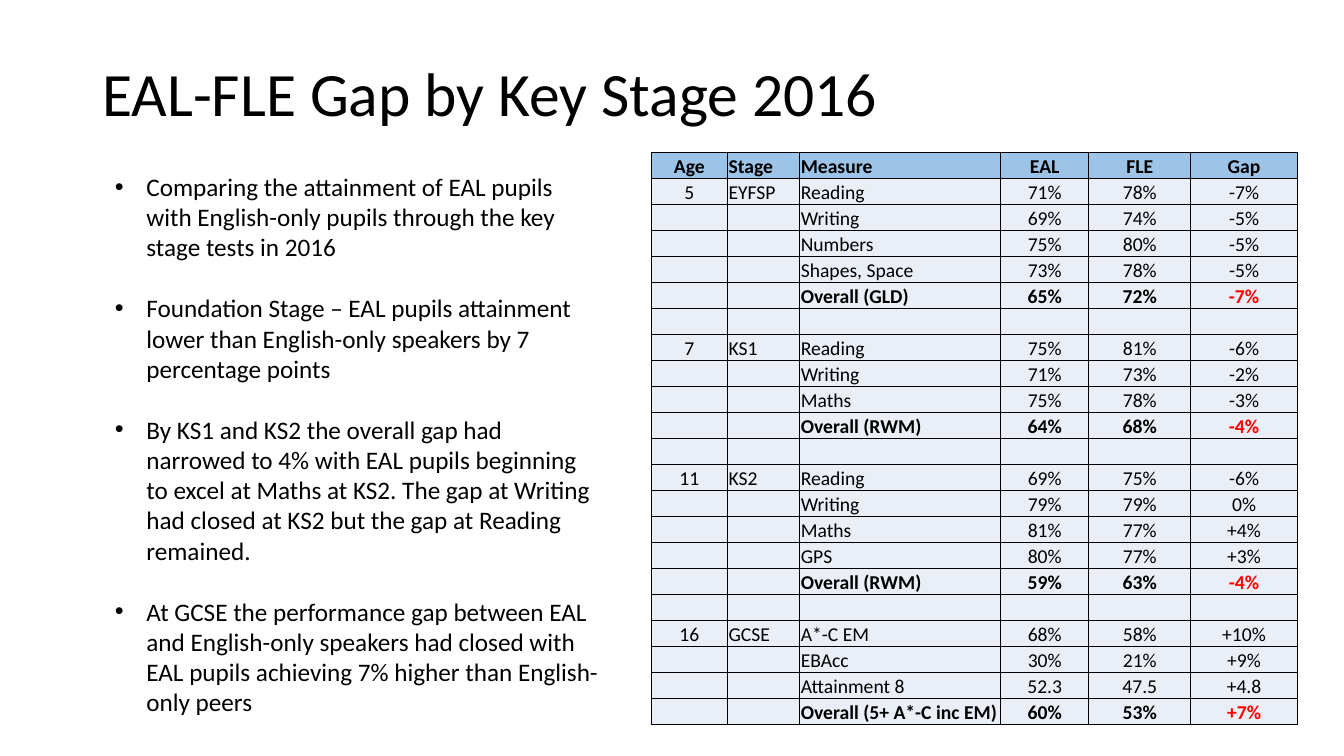
"""Build the slide on the EAL-FLE gap by key stage in 2016."""
import pptx
import pptx.dml.color
import pptx.enum.text
import pptx.oxml
import pptx.oxml.ns
import pptx.util

TITLE = "EAL-FLE Gap by Key Stage 2016"
POINTS = [
    "Comparing the attainment of EAL pupils with English-only pupils through the key stage tests in 2016",
    "Foundation Stage – EAL pupils attainment lower than English-only speakers by 7 percentage points",
    "By KS1 and KS2 the overall gap had narrowed to 4% with EAL pupils beginning to excel at Maths at KS2. "
    "The gap at Writing had closed at KS2 but the gap at Reading remained.",
    "At GCSE the performance gap between EAL and English-only speakers had closed with EAL pupils "
    "achieving 7% higher than English-only peers",
]
HEAD = ("Age", "Stage", "Measure", "EAL", "FLE", "Gap")
STAGES = [
    ("5", "EYFSP", [
        ("Reading", "71%", "78%", "-7%"),
        ("Writing", "69%", "74%", "-5%"),
        ("Numbers", "75%", "80%", "-5%"),
        ("Shapes, Space", "73%", "78%", "-5%"),
        ("Overall (GLD)", "65%", "72%", "-7%"),
    ]),
    ("7", "KS1", [
        ("Reading", "75%", "81%", "-6%"),
        ("Writing", "71%", "73%", "-2%"),
        ("Maths", "75%", "78%", "-3%"),
        ("Overall (RWM)", "64%", "68%", "-4%"),
    ]),
    ("11", "KS2", [
        ("Reading", "69%", "75%", "-6%"),
        ("Writing", "79%", "79%", "0%"),
        ("Maths", "81%", "77%", "+4%"),
        ("GPS", "80%", "77%", "+3%"),
        ("Overall (RWM)", "59%", "63%", "-4%"),
    ]),
    ("16", "GCSE", [
        ("A*-C EM", "68%", "58%", "+10%"),
        ("EBAcc", "30%", "21%", "+9%"),
        ("Attainment 8", "52.3", "47.5", "+4.8"),
        ("Overall (5+ A*-C inc EM)", "60%", "53%", "+7%"),
    ]),
]
THEME = {
    "font": "Calibri", "title": 44, "body": 18, "cell": 14,
    "ink": "000000", "alert": "FF0000", "head": "9DC3E6", "fill": "EAEFF7",
}
WIDTHS = (54.6, 51.6, 143.6, 62.8, 73, 76)
LEFT, TOP, ROW = 465.1, 108.9, 18.58
INDENT, GAP = 22.5, 21.9

Pt = pptx.util.Pt
ALIGN = pptx.enum.text.PP_ALIGN
ANCHOR = pptx.enum.text.MSO_ANCHOR
SPACE = pptx.oxml.ns.nsdecls("a")


def tint(name):
    return pptx.dml.color.RGBColor.from_string(THEME[name])


def style(para, size, ink="ink", bold=False):
    for run in para.runs:
        run.font.name = THEME["font"]
        run.font.size = Pt(THEME[size])
        run.font.bold = bold
        run.font.color.rgb = tint(ink)


def add_box(slide, left, top, width, height):
    frame = slide.shapes.add_textbox(Pt(left), Pt(top), Pt(width), Pt(height)).text_frame
    frame.word_wrap = True
    return frame


def add_title(slide):
    frame = add_box(slide, 66, 28.75, 828, 80)
    frame.vertical_anchor = ANCHOR.MIDDLE
    frame.text = TITLE
    frame.paragraphs[0].line_spacing = 0.9
    style(frame.paragraphs[0], "title")


def add_points(slide):
    frame = add_box(slide, 75, 118.8, 363, 422)
    frame.text = "\n".join(POINTS)
    for para in frame.paragraphs:
        style(para, "body")
        if para.text != POINTS[-1]:
            para.space_after = Pt(GAP)
        props = para._p.get_or_add_pPr()
        props.set("marL", str(Pt(INDENT)))
        props.set("indent", str(-Pt(INDENT)))
        props.append(pptx.oxml.parse_xml(f'<a:buFont {SPACE} typeface="Arial"/>'))
        props.append(pptx.oxml.parse_xml(f'<a:buChar {SPACE} char="•"/>'))


def list_rows():
    rows = [HEAD]
    for age, stage, scores in STAGES:
        if len(rows) > 1:
            rows.append(("",) * len(HEAD))
        for spot, score in enumerate(scores):
            rows.append(((age, stage) if spot == 0 else ("", "")) + score)
    return rows


def add_edges(cell):
    props = cell._tc.get_or_add_tcPr()
    for spot, side in enumerate("LRTB"):
        props.insert(spot, pptx.oxml.parse_xml(
            f'<a:ln{side} {SPACE} w="{Pt(1)}"><a:solidFill>'
            f'<a:srgbClr val="{THEME["ink"]}"/></a:solidFill></a:ln{side}>'))


def fill_cell(cell, text, col, head, total):
    cell.fill.solid()
    cell.fill.fore_color.rgb = tint("head" if head else "fill")
    cell.margin_left = cell.margin_right = cell.margin_top = Pt(0.7)
    cell.margin_bottom = Pt(0)
    cell.vertical_anchor = ANCHOR.BOTTOM
    cell.text_frame.text = text
    para = cell.text_frame.paragraphs[0]
    para.alignment = ALIGN.LEFT if HEAD[col] in ("Stage", "Measure") else ALIGN.CENTER
    alert = total and HEAD[col] == "Gap"
    style(para, "cell", "alert" if alert else "ink", head or total)
    if not text:
        para._p.append(pptx.oxml.parse_xml(
            f'<a:endParaRPr {SPACE} sz="{THEME["cell"] * 100}"/>'))
    add_edges(cell)


def add_scores(slide):
    rows = list_rows()
    table = slide.shapes.add_table(
        len(rows), len(HEAD), Pt(LEFT), Pt(TOP), Pt(sum(WIDTHS)), Pt(ROW * len(rows))).table
    for col, width in enumerate(WIDTHS):
        table.columns[col].width = Pt(width)
    for line, row in enumerate(rows):
        table.rows[line].height = Pt(ROW)
        total = row[2].startswith("Overall")
        for col, text in enumerate(row):
            fill_cell(table.cell(line, col), text, col, line == 0, total)


def main():
    deck = pptx.Presentation()
    deck.slide_width, deck.slide_height = Pt(960), Pt(540)
    slide = deck.slides.add_slide(deck.slide_layouts[6])
    add_title(slide)
    add_scores(slide)
    add_points(slide)
    deck.save("out.pptx")


if __name__ == "__main__":
    main()
